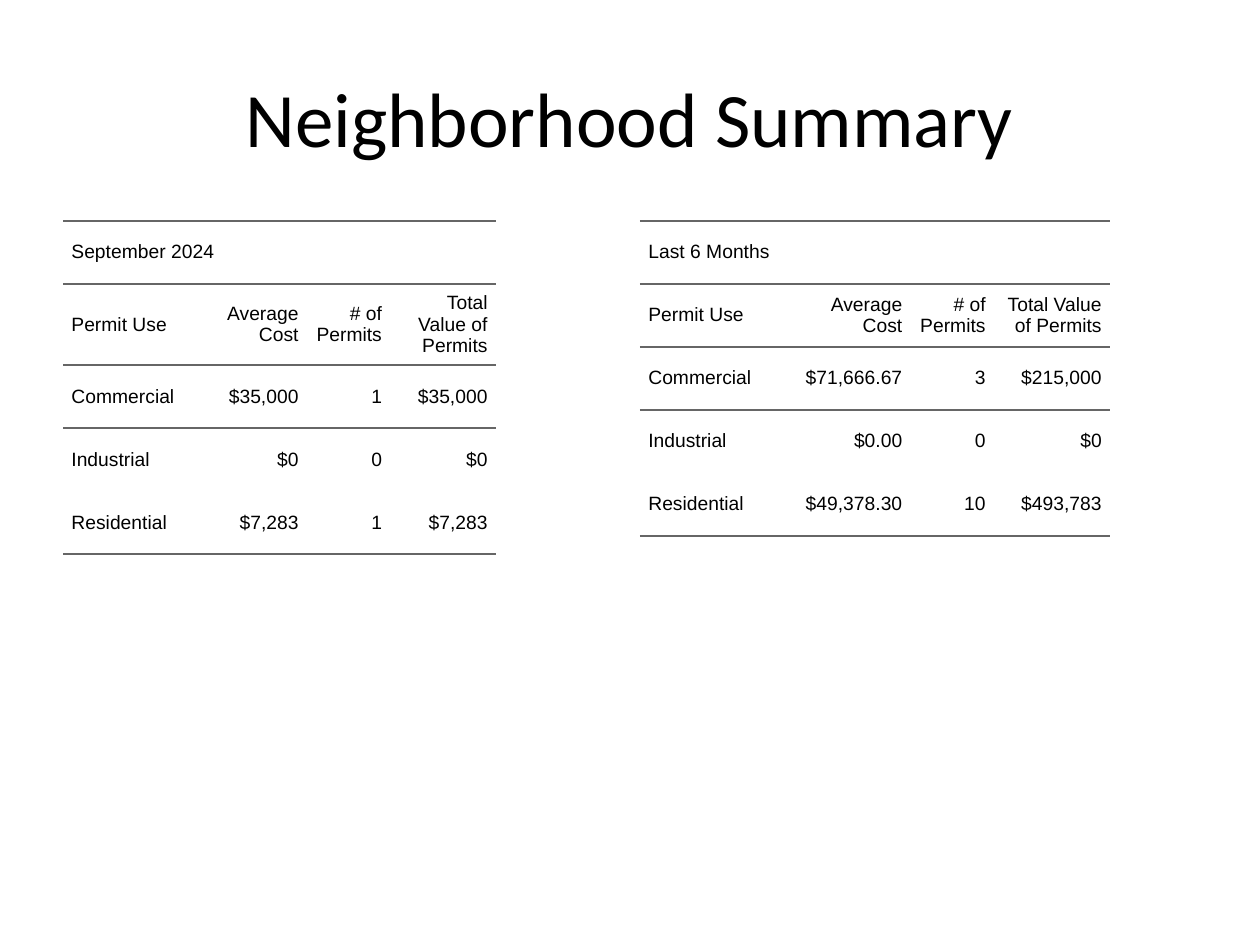
"""Build the Neighborhood Summary slide with two building-permit tables."""
from lxml.etree import SubElement
from pptx import Presentation
from pptx.dml.color import RGBColor
from pptx.enum.text import MSO_ANCHOR, PP_ALIGN
from pptx.oxml import parse_xml
from pptx.oxml.ns import nsdecls
from pptx.util import Cm, Pt

COLORS = {"text": "000000", "rule": "666666"}
PADDING = Cm(0.17)
ROW_HEIGHT = Cm(1.27)
PLAIN_STYLE = "{2D5ABB26-0587-4C30-8999-92F81FD0307C}"
HEADINGS = ["Permit Use", "Average Cost", "# of Permits", "Total Value of Permits"]
SUMMARIES = [
    {
        "period": "September 2024",
        "left": 1.27,
        "widths": [2.79, 2.13, 1.68, 2.13],
        "permits": [
            ["Commercial", "$35,000", "1", "$35,000"],
            ["Industrial", "$0", "0", "$0"],
            ["Residential", "$7,283", "1", "$7,283"],
        ],
    },
    {
        "period": "Last 6 Months",
        "left": 12.9,
        "widths": [2.79, 2.67, 1.68, 2.34],
        "permits": [
            ["Commercial", "$71,666.67", "3", "$215,000"],
            ["Industrial", "$0.00", "0", "$0"],
            ["Residential", "$49,378.30", "10", "$493,783"],
        ],
    },
]


def write(frame, text, font="Arial", size=11, align=PP_ALIGN.LEFT, spacing=0, indent=0):
    paragraph = frame.paragraphs[0]
    paragraph.alignment = align
    paragraph.space_before = paragraph.space_after = Pt(spacing)
    properties = paragraph._p.get_or_add_pPr()
    for side, value in (("marL", indent), ("marR", indent), ("indent", 0)):
        properties.set(side, str(int(value)))
    run = paragraph.add_run()
    run.text = text
    run.font.name = font
    run.font.size = Pt(size)
    run.font.color.rgb = RGBColor.from_string(COLORS["text"])


def add_rule(cell, edge):
    line = parse_xml(f'<a:{edge} {nsdecls("a")} w="{Pt(1.5)}"/>')
    fill = SubElement(line, line.tag.replace(edge, "solidFill"))
    SubElement(fill, line.tag.replace(edge, "srgbClr"), val=COLORS["rule"])
    cell._tc.get_or_add_tcPr().insert(0, line)


presentation = Presentation()
presentation.slide_width, presentation.slide_height = Cm(25.4), Cm(19.05)
slide = presentation.slides.add_slide(presentation.slide_layouts[5])

title = slide.shapes.title
title.left, title.top, title.width, title.height = Cm(1.27), Cm(0.76), Cm(22.86), Cm(3.18)
title.text_frame.vertical_anchor = MSO_ANCHOR.MIDDLE
write(title.text_frame, "Neighborhood Summary", font="Calibri", size=44, align=PP_ALIGN.CENTER)

for summary in SUMMARIES:
    rows = [[summary["period"], "", "", ""], HEADINGS, *summary["permits"]]
    last_row = len(rows) - 1
    summary_frame = slide.shapes.add_table(
        len(rows), len(HEADINGS), Cm(summary["left"]), Cm(4.45), Cm(11.23), ROW_HEIGHT * len(rows)
    )
    permits = summary_frame.table
    permits.first_row = permits.horz_banding = False
    permits._tbl.tblPr[0].text = PLAIN_STYLE
    for column, width in zip(permits.columns, summary["widths"]):
        column.width = Cm(width)
    permits.cell(0, 0).merge(permits.cell(0, len(HEADINGS) - 1))

    for row_index, values in enumerate(rows):
        permits.rows[row_index].height = ROW_HEIGHT
        for column_index, value in enumerate(values):
            cell = permits.cell(row_index, column_index)
            cell.fill.background()
            cell.vertical_anchor = MSO_ANCHOR.MIDDLE
            cell.margin_left = cell.margin_right = 0
            cell.margin_top = cell.margin_bottom = PADDING
            if row_index in (0, 1, last_row):
                add_rule(cell, "lnB")
            if row_index < 3:
                add_rule(cell, "lnT")
            if value:
                align = PP_ALIGN.RIGHT if column_index else PP_ALIGN.LEFT
                write(cell.text_frame, value, align=align, spacing=5, indent=PADDING)
    summary_frame.width, summary_frame.height = Cm(11.23), Cm(12.57)

presentation.save("out.pptx")
